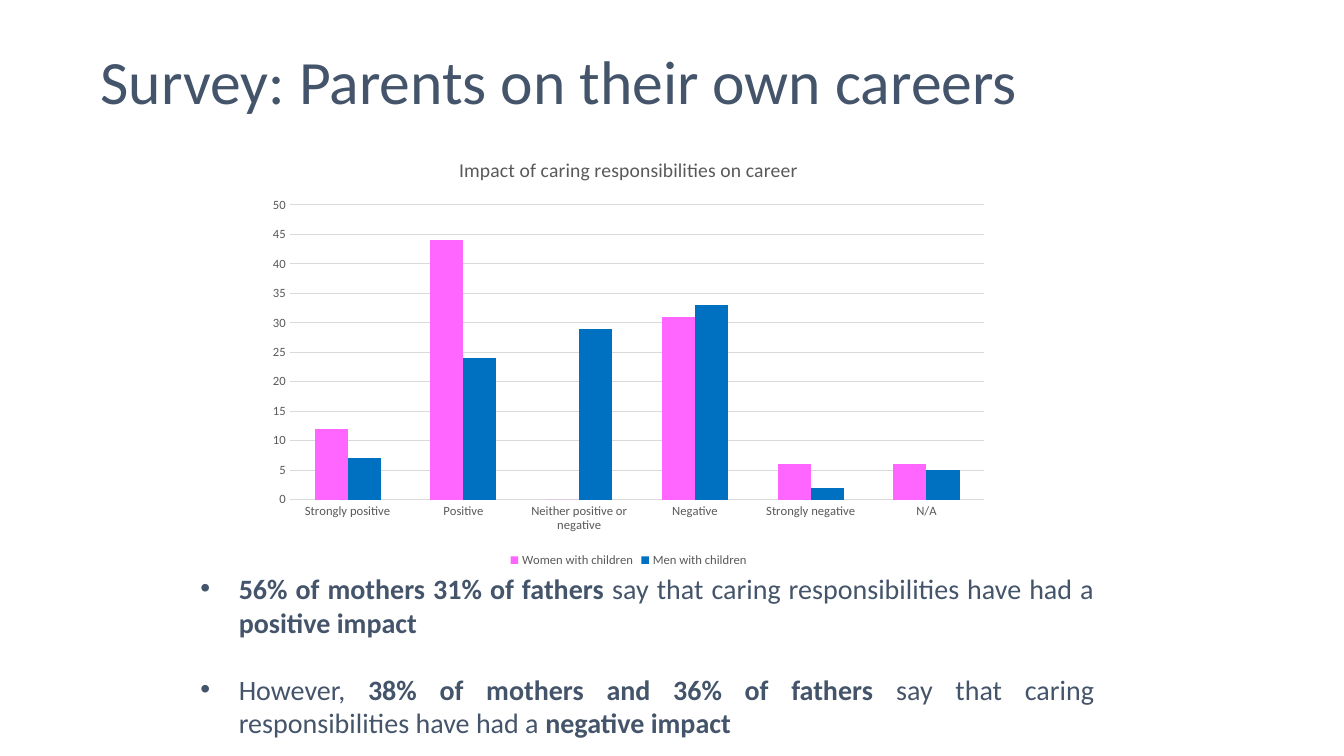
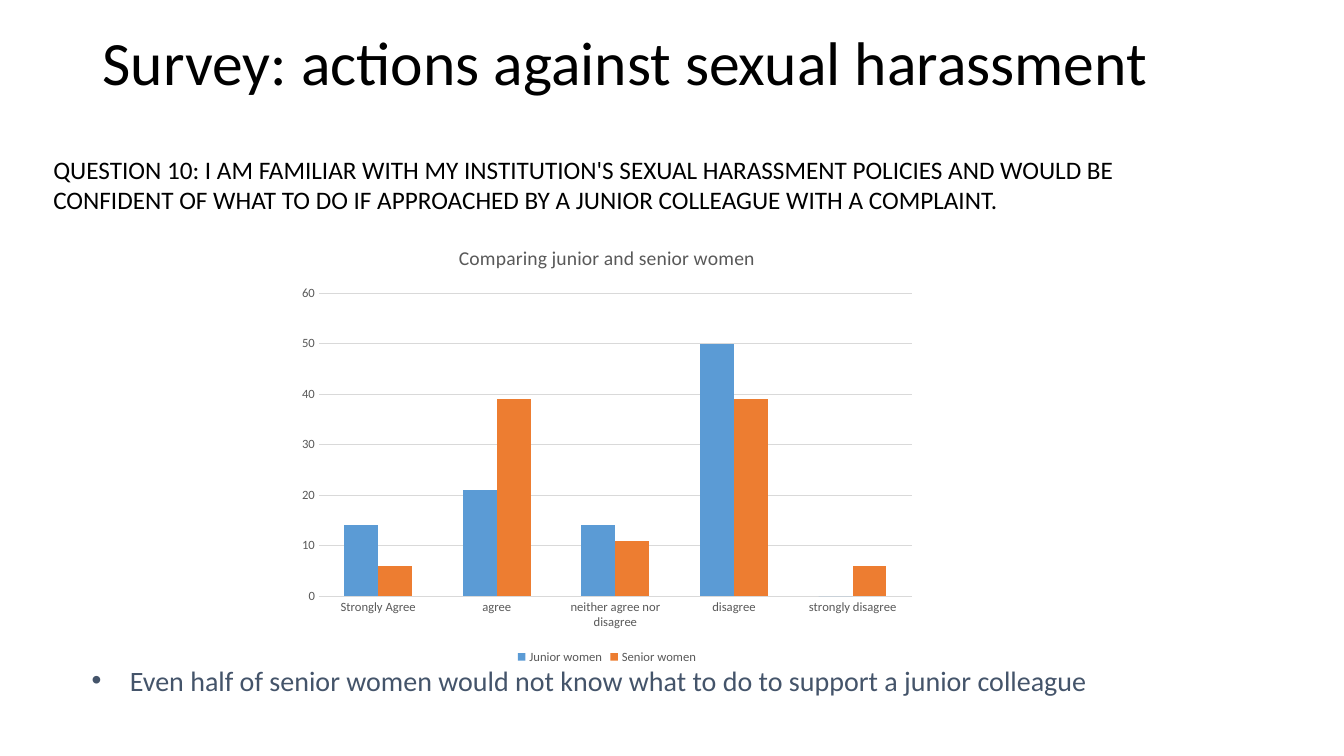
from lxml import etree
from pptx import Presentation
from pptx.chart.data import CategoryChartData
from pptx.dml.color import RGBColor
from pptx.enum.chart import XL_CHART_TYPE, XL_LEGEND_POSITION, XL_TICK_MARK
from pptx.enum.text import MSO_ANCHOR, PP_ALIGN
from pptx.oxml.ns import qn
from pptx.util import Inches, Pt

COLUMNS = XL_CHART_TYPE.COLUMN_CLUSTERED
BOTTOM = XL_LEGEND_POSITION.BOTTOM
NO_TICK = XL_TICK_MARK.NONE
MIDDLE = MSO_ANCHOR.MIDDLE
JUSTIFY = PP_ALIGN.JUSTIFY

BLACK = RGBColor(0x00, 0x00, 0x00)
SLATE = RGBColor(0x44, 0x54, 0x6A)
CHART_TEXT = RGBColor(0x59, 0x59, 0x59)
GRID = RGBColor(0xD9, 0xD9, 0xD9)
PINK = RGBColor(0xFF, 0x66, 0xFF)
STRONG_BLUE = RGBColor(0x00, 0x70, 0xC0)
SOFT_BLUE = RGBColor(0x5B, 0x9B, 0xD5)
ORANGE = RGBColor(0xED, 0x7D, 0x31)


class Deck:
    """Holds the shared style and the current slide."""

    font_name = "Calibri"
    bullet_indent = Inches(0.38)

    def __init__(self):
        self.presentation = Presentation()
        self.presentation.slide_width = Inches(13.33)
        self.presentation.slide_height = Inches(7.5)
        self.slide = None

    def new_slide(self):
        layout = self.presentation.slide_layouts[6]
        self.slide = self.presentation.slides.add_slide(layout)

    def style(self, font, size, color, bold=False):
        font.name = self.font_name
        font.size = Pt(size)
        font.color.rgb = color
        font.bold = bold

    def text_frame(self, left, top, width, height):
        box = self.slide.shapes.add_textbox(
            Inches(left), Inches(top), Inches(width), Inches(height))
        box.text_frame.word_wrap = True
        return box.text_frame

    def text(self, text, left, top, width, height, size=18, color=BLACK):
        frame = self.text_frame(left, top, width, height)
        frame.text = text
        self.style(frame.paragraphs[0].runs[0].font, size, color)
        return frame

    def title(self, text, left, top, color):
        frame = self.text(text, left, top, 11.5, 1.45, 44, color)
        frame.vertical_anchor = MIDDLE
        frame.paragraphs[0].line_spacing = 0.9

    def bullets(self, items, left, top, width, height):
        """Each item is a list of (text, bold) parts."""
        frame = self.text_frame(left, top, width, height)
        for index, parts in enumerate(items):
            paragraph = frame.add_paragraph() if index else frame.paragraphs[0]
            paragraph.alignment = JUSTIFY
            if index:
                paragraph.space_before = Pt(24)
            properties = paragraph._p.get_or_add_pPr()
            properties.set("marL", str(self.bullet_indent))
            properties.set("indent", str(-self.bullet_indent))
            etree.SubElement(properties, qn("a:buFont")).set("typeface", "Arial")
            etree.SubElement(properties, qn("a:buChar")).set("char", "•")
            for text, bold in parts:
                run = paragraph.add_run()
                run.text = text
                self.style(run.font, 20, SLATE, bold)

    def column_chart(self, title, categories, series, maximum, step,
                     left, top, width, height):
        """Each series is a (name, color, values) tuple."""
        data = CategoryChartData(number_format="General")
        data.categories = categories
        for name, _, values in series:
            data.add_series(name, values)
        chart = self.slide.shapes.add_chart(
            COLUMNS, Inches(left), Inches(top), Inches(width), Inches(height),
            data).chart
        self.style(chart.font, 10, BLACK)

        # Title and legend
        chart.has_title = True
        chart.chart_title.include_in_layout = False
        title_frame = chart.chart_title.text_frame
        title_frame.text = title
        self.style(title_frame.paragraphs[0].runs[0].font, 14, CHART_TEXT)
        chart.has_legend = True
        chart.legend.position = BOTTOM
        chart.legend.include_in_layout = False
        self.style(chart.legend.font, 9, CHART_TEXT)

        # Axes
        for axis in (chart.category_axis, chart.value_axis):
            axis.major_tick_mark = axis.minor_tick_mark = NO_TICK
            self.style(axis.tick_labels.font, 9, CHART_TEXT)
        chart.category_axis.format.line.color.rgb = GRID
        value_axis = chart.value_axis
        value_axis.format.line.fill.background()
        value_axis.minimum_scale = 0
        value_axis.maximum_scale = maximum
        value_axis.major_unit = step
        grid_line = value_axis.major_gridlines.format.line
        grid_line.color.rgb = GRID
        grid_line.width = Pt(0.75)

        # Columns
        plot = chart.plots[0]
        plot.gap_width = 150
        plot.overlap = 0
        plot.vary_by_categories = False
        for columns, (_, color, _) in zip(plot.series, series):
            columns.format.fill.solid()
            columns.format.fill.fore_color.rgb = color


def build_careers(deck):
    deck.new_slide()
    deck.title("Survey: Parents on their own careers", 0.9, 0.11, SLATE)
    deck.column_chart(
        "Impact of caring responsibilities on career",
        ["Strongly positive", "Positive", "Neither positive or negative",
         "Negative", "Strongly negative", "N/A"],
        [("Women with children", PINK, (12, 44, 0, 31, 6, 6)),
         ("Men with children", STRONG_BLUE, (7, 24, 29, 33, 2, 5))],
        50, 5, 2.56, 1.38, 7.35, 4.29)
    shared_words = " say that caring responsibilities have had a "
    deck.bullets(
        [[("56% of mothers 31% of fathers", True), (shared_words, False),
          ("positive impact", True)],
         [("However, ", False), ("38% of mothers and 36% of fathers", True),
          (shared_words, False), ("negative impact", True)]],
        1.89, 5.62, 9.06, 1.78)


def build_harassment(deck):
    deck.new_slide()
    deck.title("Survey: actions against sexual harassment", 0.92, -0.08, BLACK)
    deck.column_chart(
        "Comparing junior and senior women",
        ["Strongly Agree", "agree", "neither agree nor disagree",
         "disagree", "strongly disagree"],
        [("Junior women", SOFT_BLUE, (14, 21, 14, 50, 0)),
         ("Senior women", ORANGE, (6, 39, 11, 39, 6))],
        60, 10, 2.87, 2.25, 6.3, 4.38)
    deck.text(
        "QUESTION 10: I AM FAMILIAR WITH MY INSTITUTION'S SEXUAL HARASSMENT "
        "POLICIES AND WOULD BE CONFIDENT OF WHAT TO DO IF APPROACHED BY A "
        "JUNIOR COLLEAGUE WITH A COMPLAINT.", 0.43, 1.48, 11.22, 0.71)
    deck.bullets(
        [[("Even half of senior women would not know what to do to support "
           "a junior colleague", False)]],
        0.81, 6.53, 10.24, 0.44)


def main():
    deck = Deck()
    build_careers(deck)
    build_harassment(deck)
    deck.presentation.save("out.pptx")


if __name__ == "__main__":
    main()
